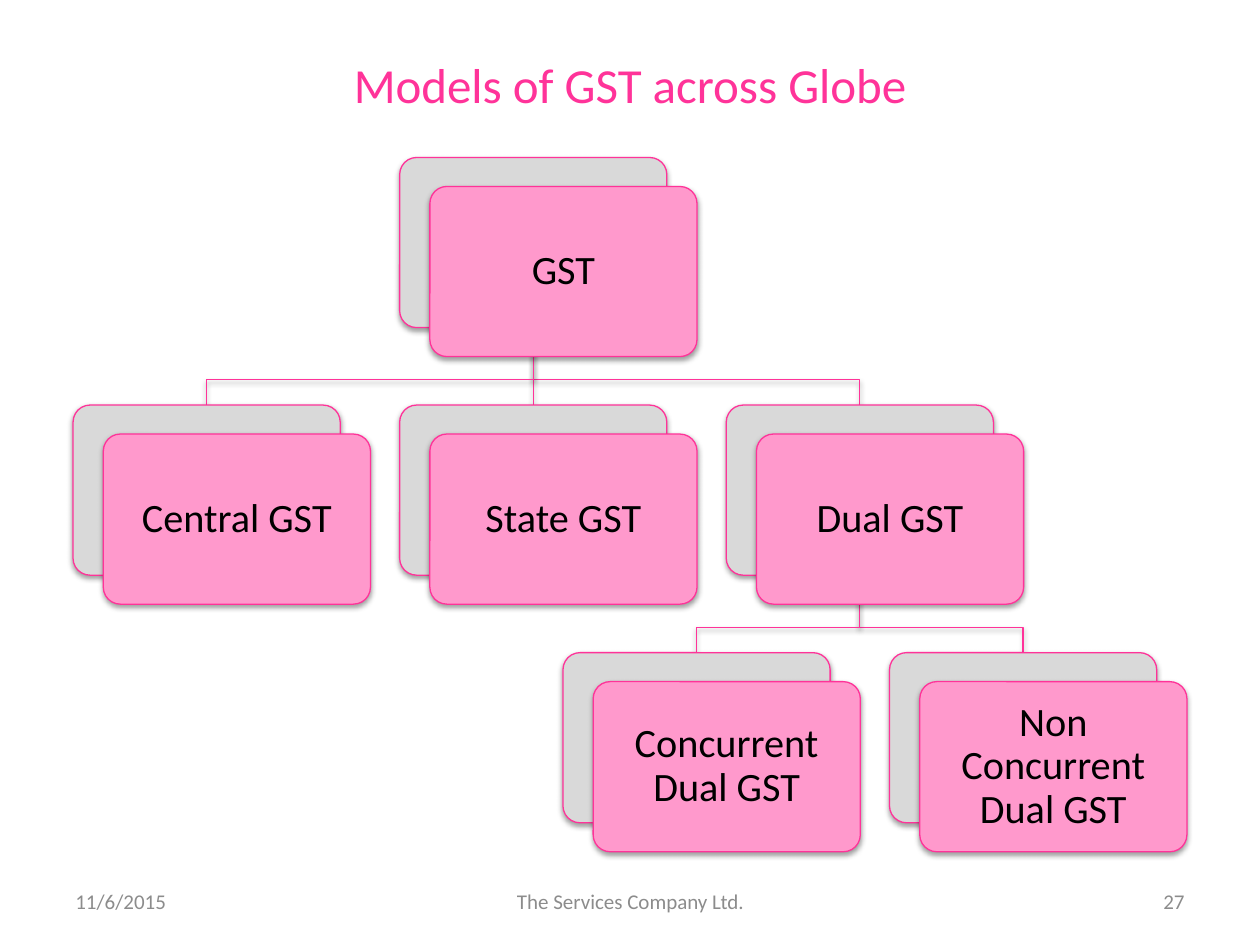
from dataclasses import dataclass
from lxml.etree import SubElement
from pptx import Presentation
from pptx.dml.color import RGBColor as RGB
from pptx.enum.shapes import MSO_CONNECTOR as Link, MSO_SHAPE as Kind
from pptx.enum.text import MSO_ANCHOR as Anchor, PP_ALIGN as Align
from pptx.oxml.ns import qn
from pptx.util import Inches, Pt


@dataclass(frozen=True)
class Theme:
    font: str = "Calibri"
    pink: str = "FF3399"
    rose: str = "FF99CC"
    back: str = "D9D9D9"
    ink: str = "000000"
    mute: str = "8C8C8C"
    head: int = 28
    body: int = 23
    foot: int = 12
    line: float = 0.75


T = Theme()
TITLE = "Models of GST across Globe"
# name: (half column, row, parent)
TREE = {
    "GST": (2, 0, None),
    "Central GST": (0, 1, "GST"),
    "State GST": (2, 1, "GST"),
    "Dual GST": (4, 1, "GST"),
    "Concurrent Dual GST": (3, 2, "Dual GST"),
    "Non Concurrent Dual GST": (5, 2, "Dual GST"),
}
# text, left, width, alignment
FOOT = [
    ("11/6/2015", 0.5, 2.33, Align.LEFT),
    ("The Services Company Ltd.", 3.42, 3.17, Align.CENTER),
    ("27", 7.17, 2.33, Align.RIGHT),
]

WIDE, HIGH = 10, 7.5
LEFT, TOP = 0.58, 1.25
COL, ROW = (7.06 - LEFT) / 5, (5.18 - TOP) / 2
BOX_W, BOX_H = 2.12, 1.35
OFF_X, OFF_Y = 0.24, 0.23
DROP = 0.2  # from the bend of a branch down to the child


def inch(*nums):
    return [Inches(n) for n in nums]


def write(frame, text, size=T.body, color=T.ink, align=Align.CENTER, gap=None, inset=None):
    frame.word_wrap = True
    frame.vertical_anchor = Anchor.MIDDLE
    if inset is not None:
        frame.margin_left = frame.margin_right = Inches(inset)
        frame.margin_top = frame.margin_bottom = Inches(inset)
    para = frame.paragraphs[0]
    para.alignment = align
    if gap:
        para.line_spacing = gap
    run = para.add_run()
    run.text = text
    run.font.name, run.font.size = T.font, Pt(size)
    run.font.color.rgb = RGB.from_string(color)


def trim(shape):
    """Give the shape its outline and soft drop shadow."""
    shape.line.color.rgb = RGB.from_string(T.pink)
    shape.line.width = Pt(T.line)
    fx = SubElement(shape._element.spPr, qn("a:effectLst"))
    shade = SubElement(fx, qn("a:outerShdw"), blurRad=str(Pt(3.1)), dist=str(Pt(1.6)),
                       dir="5400000", rotWithShape="0")
    tint = SubElement(shade, qn("a:srgbClr"), val="000000")
    SubElement(tint, qn("a:alpha"), val="38000")


def spot(name):
    col, row, _ = TREE[name]
    return LEFT + col * COL, TOP + row * ROW


def branch(shapes, name, root):
    (x1, y1), (x2, y2) = spot(root), spot(name)
    x1, x2, y1 = x1 + BOX_W / 2, x2 + BOX_W / 2, y1 + BOX_H
    if x1 == x2:
        line = shapes.add_connector(Link.STRAIGHT, *inch(x1, y1, x2, y2))
    else:
        bend = y2 - DROP
        pen = shapes.build_freeform(*inch(x1, y1))
        pen.add_line_segments([inch(x1, bend), inch(x2, bend), inch(x2, y2)], close=False)
        line = pen.convert_to_shape()
        line.fill.background()
    trim(line)


def card(shapes, x, y, fill):
    box = shapes.add_shape(Kind.ROUNDED_RECTANGLE, *inch(x, y, BOX_W, BOX_H))
    box.adjustments[0] = 0.1
    box.fill.solid()
    box.fill.fore_color.rgb = RGB.from_string(fill)
    trim(box)
    return box


def main():
    deck = Presentation()
    deck.slide_width, deck.slide_height = inch(WIDE, HIGH)
    slide = deck.slides.add_slide(deck.slide_layouts[5])
    shapes = slide.shapes

    title = shapes.title
    title.left, title.top, title.width, title.height = inch(0.5, 0.33, 9, 0.67)
    write(title.text_frame, TITLE, size=T.head, color=T.pink)

    for name, (_, _, root) in reversed(TREE.items()):
        if root:
            branch(shapes, name, root)
    for name in TREE:
        x, y = spot(name)
        card(shapes, x, y, T.back)
        front = card(shapes, x + OFF_X, y + OFF_Y, T.rose)
        write(front.text_frame, name, gap=0.9, inset=0.1)

    for text, x, width, align in FOOT:
        box = shapes.add_textbox(*inch(x, 6.95, width, 0.4))
        write(box.text_frame, text, size=T.foot, color=T.mute, align=align)
    deck.save("out.pptx")


if __name__ == "__main__":
    main()
